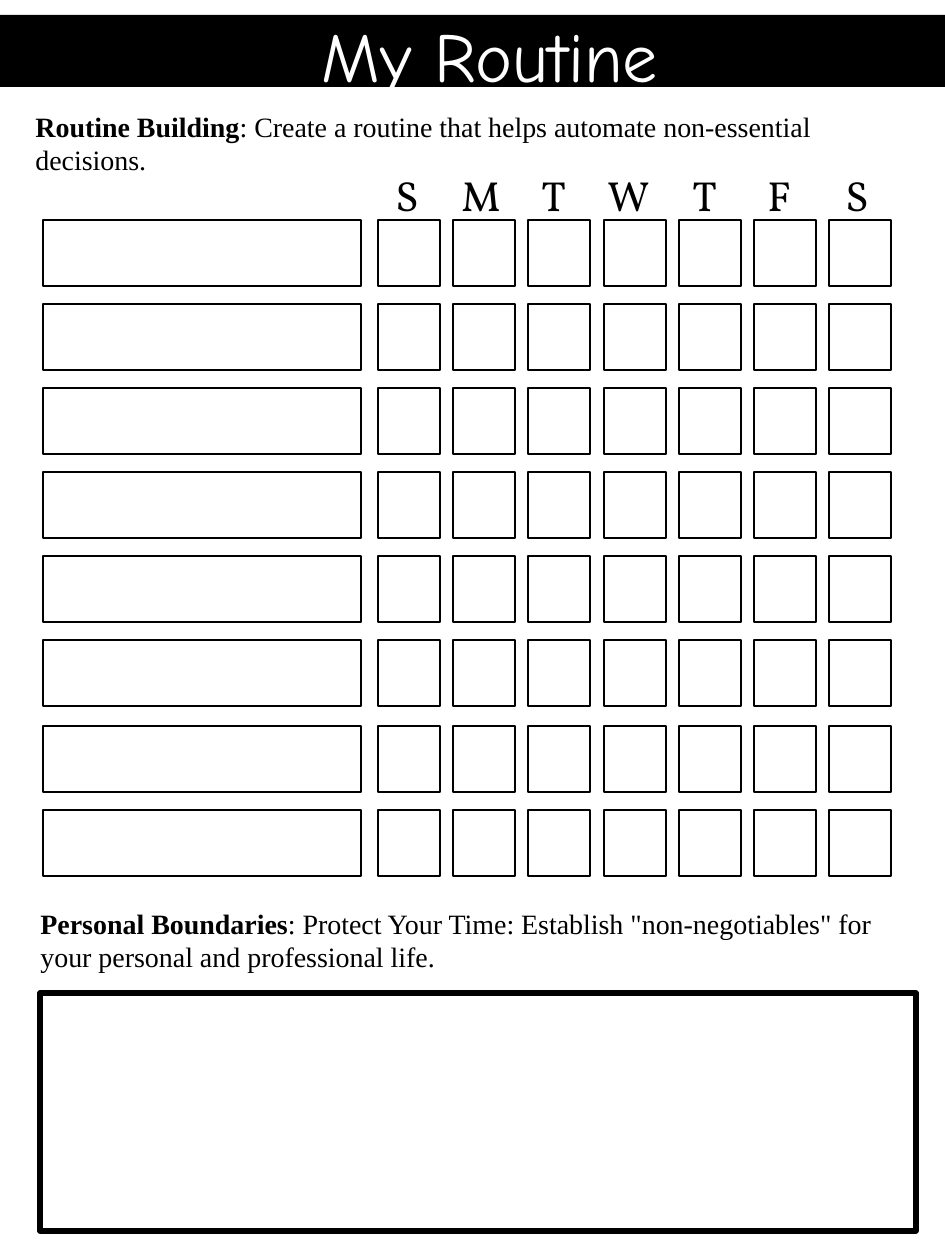
"""Build a one-page weekly routine planner with a habit grid and a boundaries box."""
from pptx import Presentation
from pptx.dml.color import RGBColor
from pptx.enum.shapes import MSO_SHAPE as Shape
from pptx.enum.text import MSO_ANCHOR as Anchor, MSO_AUTO_SIZE as AutoSize, PP_ALIGN as Align
from pptx.util import Pt

PX = 914400 // 126
BLACK, WHITE = "000000", "FFFFFF"
SERIF = "Times New Roman"

TITLE = "My Routine"
SECTIONS = [
    ("Routine Building", ": Create a routine that helps automate non-essential decisions.",
     (23, 103, 906, 47)),
    ("Personal Boundaries", ": Protect Your Time: Establish \"non-negotiables\" for "
     "your personal and professional life.", (28, 900, 906, 81)),
]
DAYS = [("S", 383, 47), ("M", 449, 64), ("T", 529, 52), ("W", 595, 69),
        ("T", 680, 52), ("F", 755, 48), ("S", 833, 47)]
DAY_TOP, DAY_HEIGHT = 163, 63

ROWS, ROW_TOP, ROW_STEP, ROW_HEIGHT = 8, 220, 84, 66
UPPER_ROWS, LOWER_SHIFT = 6, 2
HABIT_LEFT, HABIT_WIDTH = 43, 318
CHECK_LEFT, CHECK_STEP, CHECK_WIDTH = 378, 75.2, 62

BAND = (0, 15, 945, 72)
TITLE_AREA = (309, 6, 425, 97)
NOTES_AREA = (40, 993, 876, 238)


def color(value):
    return RGBColor.from_string(value)


def emu(area):
    return [round(length) * PX for length in area]


def add_box(slide, area, fill=None, line=None, weight=1):
    box = slide.shapes.add_shape(Shape.RECTANGLE, *emu(area))
    box.shadow.inherit = False
    if fill:
        box.fill.solid()
        box.fill.fore_color.rgb = color(fill)
    else:
        box.fill.background()
    if line:
        box.line.color.rgb = color(line)
        box.line.width = Pt(weight)
    else:
        box.line.fill.background()
    return box


def write(frame, runs, font, size, ink=BLACK, wrap=True):
    frame.word_wrap = wrap
    frame.auto_size = AutoSize.SHAPE_TO_FIT_TEXT
    frame.vertical_anchor = Anchor.TOP
    para = frame.paragraphs[0]
    para.alignment = Align.LEFT
    for text, bold in runs:
        span = para.add_run()
        span.text = text
        span.font.name = font
        span.font.size = Pt(size)
        span.font.bold = bold
        span.font.color.rgb = color(ink)


def add_text(slide, area, runs, font, size, wrap=True):
    box = slide.shapes.add_textbox(*emu(area))
    write(box.text_frame, runs, font, size, wrap=wrap)


def add_header(slide):
    title = slide.shapes.title
    title.left, title.top, title.width, title.height = emu(TITLE_AREA)
    write(title.text_frame, [(TITLE, False)], "Comic Neue", 40, WHITE)
    band = add_box(slide, BAND, fill=BLACK)
    title._element.addprevious(band._element)


def add_grid(slide):
    for row in range(ROWS):
        top = ROW_TOP + ROW_STEP * row + LOWER_SHIFT * (row >= UPPER_ROWS)
        add_box(slide, (HABIT_LEFT, top, HABIT_WIDTH, ROW_HEIGHT), line=BLACK)
        for column in range(len(DAYS)):
            left = CHECK_LEFT + CHECK_STEP * column
            add_box(slide, (left, top, CHECK_WIDTH, ROW_HEIGHT), line=BLACK)
    for letter, left, width in DAYS:
        add_text(slide, (left, DAY_TOP, width, DAY_HEIGHT), [(letter, False)],
                 "Vollkorn", 24, wrap=False)


def main():
    deck = Presentation()
    deck.slide_width, deck.slide_height = emu((945, 1260))
    slide = deck.slides.add_slide(deck.slide_layouts[5])
    add_header(slide)
    add_grid(slide)
    for heading, detail, area in SECTIONS:
        add_text(slide, area, [(heading, True), (detail, False)], SERIF, 16)
    add_box(slide, NOTES_AREA, WHITE, BLACK, 3)
    deck.save("out.pptx")


if __name__ == "__main__":
    main()
